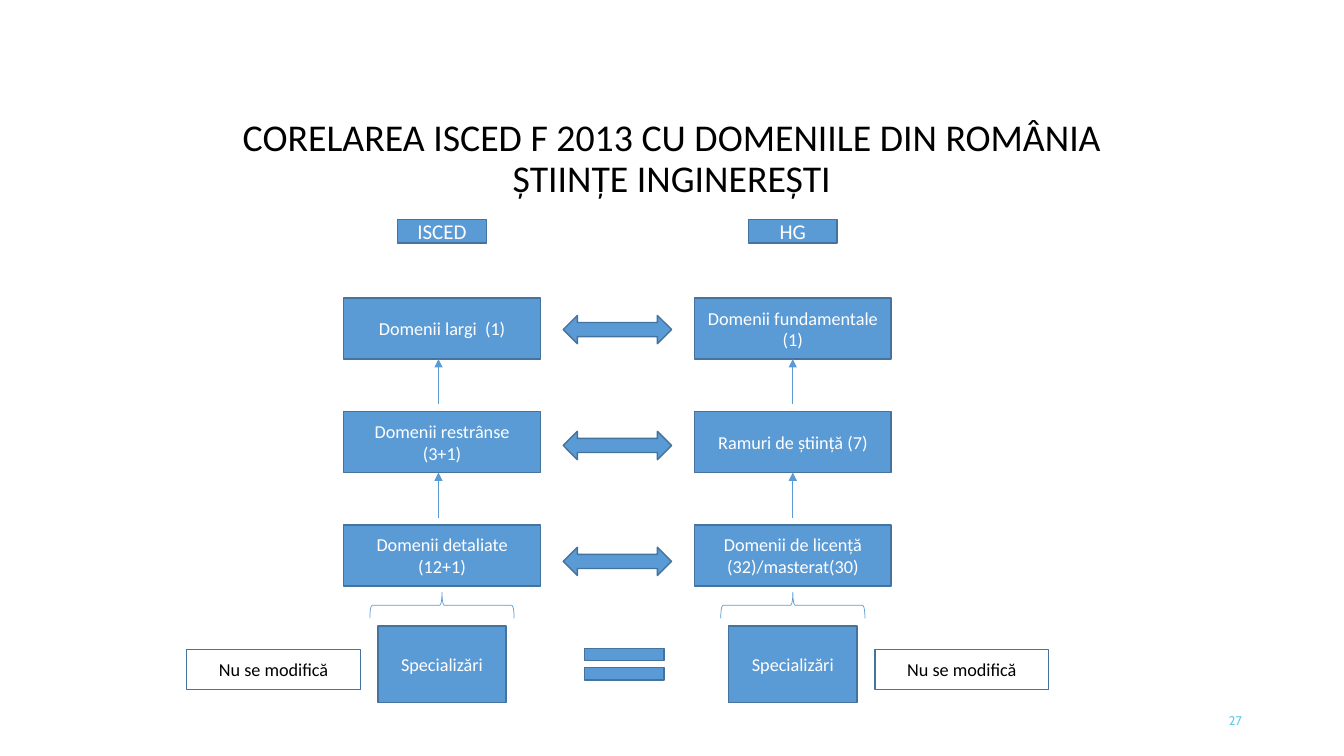
"""Builds the slide that maps ISCED F 2013 fields to Romanian engineering domains."""
import pptx
import pptx.dml.color
import pptx.enum.shapes
import pptx.enum.text
import pptx.oxml
import pptx.oxml.ns
import pptx.util

Pt = pptx.util.Pt
RGBColor = pptx.dml.color.RGBColor
SHAPE = pptx.enum.shapes.MSO_SHAPE
ALIGN = pptx.enum.text.PP_ALIGN

BLUE = RGBColor(0x5B, 0x9B, 0xD5)
OUTLINE = RGBColor(0x43, 0x73, 0x9E)
CYAN = RGBColor(0x5F, 0xCB, 0xEF)
WHITE = RGBColor(255, 255, 255)
BLACK = RGBColor(0, 0, 0)

COLUMNS = (
    (315.7, -2.5, 195.4, "ISCED",
     ("Domenii largi  (1)", "Domenii restrânse (3+1)", "Domenii detaliate (12+1)")),
    (566.3, 0, 687, "HG",
     ("Domenii fundamentale (1)", "Ramuri de știință (7)",
      "Domenii de licență (32)/masterat(30)")),
)
ROW_TOP, ROW_STEP = 213, 81
BOX_WIDTH, BOX_HEIGHT = 140.4, 43.5
LINK_MIDDLE, LINK_STEP = 235.4, 82.8


class SlideBuilder:
    """Holds the slide and its style and adds each kind of element."""

    frame_format = {
        "word_wrap": True,
        "margin_top": 0,
        "margin_bottom": 0,
        "vertical_anchor": pptx.enum.text.MSO_ANCHOR.MIDDLE,
    }

    def __init__(self, slide):
        self.slide = slide

    def label(self, shape, text, size, color, font="Calibri", align=ALIGN.CENTER, spacing=1.0):
        frame = shape.text_frame
        for name, value in self.frame_format.items():
            setattr(frame, name, value)
        paragraph = frame.paragraphs[0]
        paragraph.text = text
        paragraph.alignment = align
        paragraph.line_spacing = spacing
        for name, value in {"name": font, "size": Pt(size)}.items():
            setattr(paragraph.font, name, value)
        paragraph.font.color.rgb = color

    def text(self, left, top, width, height, text, size, color, **formats):
        box = self.slide.shapes.add_textbox(Pt(left), Pt(top), Pt(width), Pt(height))
        self.label(box, text, size, color, **formats)

    def shape(self, kind, center, middle, width, height, fill=BLUE, line=OUTLINE, weight=1):
        shape = self.slide.shapes.add_shape(
            kind, Pt(center - width / 2), Pt(middle - height / 2), Pt(width), Pt(height))
        shape.shadow.inherit = False
        if fill is None:
            shape.fill.background()
        else:
            shape.fill.solid()
            shape.fill.fore_color.rgb = fill
        shape.line.color.rgb = line
        shape.line.width = Pt(weight)
        return shape

    def box(self, center, middle, width, height, text, size=13, fill=BLUE, color=WHITE):
        shape = self.shape(SHAPE.RECTANGLE, center, middle, width, height, fill)
        self.label(shape, text, size, color)

    def brace(self, center, middle, width, height):
        shape = self.shape(SHAPE.LEFT_BRACE, center, middle, height, width, None, BLUE, 0.5)
        shape.rotation = 90

    def arrow(self, x, start, end):
        connector = self.slide.shapes.add_connector(
            pptx.enum.shapes.MSO_CONNECTOR.STRAIGHT, Pt(x), Pt(start), Pt(x), Pt(end))
        connector.line.color.rgb = BLUE
        connector.line.width = Pt(0.5)
        properties = connector._element.spPr
        outline = properties.find(pptx.oxml.ns.qn("a:ln"))
        head = pptx.oxml.parse_xml(
            f'<a:tailEnd {pptx.oxml.ns.nsdecls("a")} type="triangle"/>')
        outline.append(head)
        properties.append(pptx.oxml.parse_xml(
            f'<a:effectLst {pptx.oxml.ns.nsdecls("a")}/>'))


def main():
    presentation = pptx.Presentation()
    presentation.slide_width, presentation.slide_height = Pt(960), Pt(540)
    builder = SlideBuilder(presentation.slides.add_slide(presentation.slide_layouts[6]))

    builder.text(133.9, 78.5, 691.9, 70.6,
                 "CORELAREA ISCED F 2013 CU DOMENIILE DIN ROMÂNIA\vȘTIINȚE INGINEREȘTI",
                 27, BLACK, spacing=0.9)

    for center, arrow_shift, note_center, heading, domains in COLUMNS:
        builder.box(center, 165.2, 63.4, 16.6, heading, size=15)
        for row, domain in enumerate(domains):
            top = ROW_TOP + row * ROW_STEP
            builder.box(center, top + BOX_HEIGHT / 2, BOX_WIDTH, BOX_HEIGHT, domain)
            if row:
                builder.arrow(center + arrow_shift, top - 5.2, top - ROW_STEP + BOX_HEIGHT)
        builder.brace(center, 432.4, 103, 18.7)
        builder.box(center, 474.5, 91.6, 54.8, "Specializări")
        builder.box(note_center, 478.1, 124, 28.5, "Nu se modifică", fill=None, color=BLACK)

    for row in range(3):
        builder.shape(SHAPE.LEFT_RIGHT_ARROW, 441, LINK_MIDDLE + row * LINK_STEP, 77.4, 20.2)
    equal = builder.shape(SHAPE.MATH_EQUAL, 446, 474.5, 77, 36)
    equal.adjustments[0], equal.adjustments[1] = 0.24, 0.14

    builder.text(678.2, 500.4, 216, 28.8, "27", 9, CYAN, font="Cabin", align=ALIGN.RIGHT)
    presentation.save("out.pptx")


if __name__ == "__main__":
    main()
